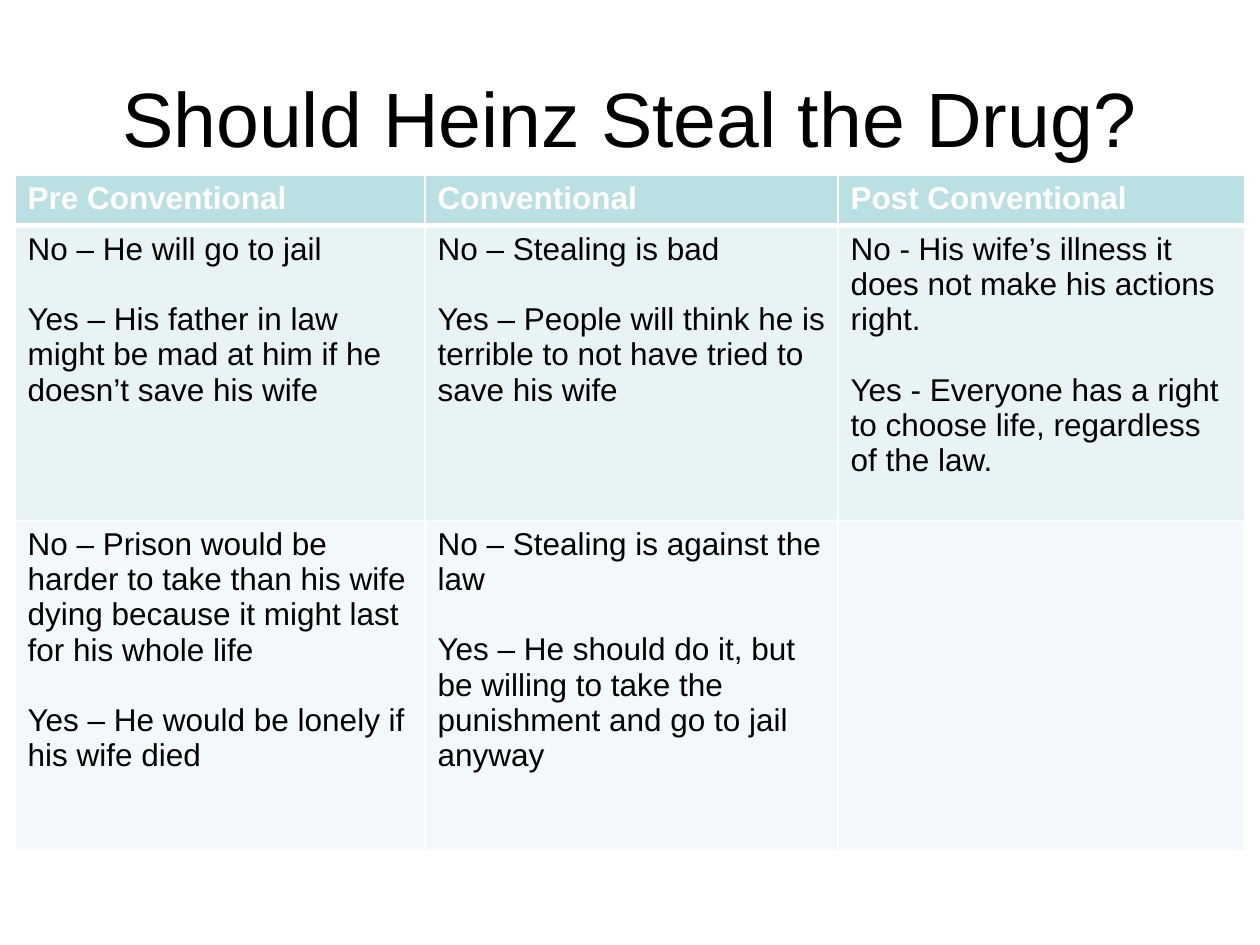
import pptx
import pptx.util
import pptx.dml.color
import pptx.enum.text
import pptx.oxml
import pptx.oxml.ns

RGBColor = pptx.dml.color.RGBColor
WHITE = RGBColor(0xFF, 0xFF, 0xFF)
BLACK = RGBColor(0x00, 0x00, 0x00)
HEADER = RGBColor(0xBB, 0xE0, 0xE3)
BAND_1 = RGBColor(0xE7, 0xF3, 0xF4)
BAND_2 = RGBColor(0xF3, 0xF9, 0xFA)
FONT = "Arial"


def px(n):
    return round(n * 914400 / 126)


def format_run(r, size, color, bold=False):
    r.font.name = FONT
    r.font.size = pptx.util.Pt(size)
    r.font.bold = bold
    r.font.color.rgb = color


prs = pptx.Presentation()
prs.slide_width = px(1260)
prs.slide_height = px(945)
s = prs.slides.add_slide(prs.slide_layouts[6])

sp = s.shapes.add_textbox(px(63), px(38), px(1134), px(158))
tf = sp.text_frame
tf.word_wrap = True
tf.vertical_anchor = pptx.enum.text.MSO_ANCHOR.MIDDLE
tf.text = "Should Heinz Steal the Drug?"
p = tf.paragraphs[0]
p.alignment = pptx.enum.text.PP_ALIGN.CENTER
format_run(p.runs[0], 44, BLACK)

rows = [
    (50, HEADER, [["Pre Conventional"], ["Conventional"], ["Post Conventional"]]),
    (295, BAND_1, [
        ["No – He will go to jail",
         "Yes – His father in law might be mad at him if he doesn’t save his wife"],
        ["No – Stealing is bad",
         "Yes – People will think he is terrible to not have tried to save his wife"],
        ["No - His wife’s illness it does not make his actions right.",
         "Yes - Everyone has a right to choose life, regardless of the law."],
    ]),
    (330, BAND_2, [
        ["No – Prison would be harder to take than his wife dying because it "
         "might last for his whole life",
         "Yes – He would be lonely if his wife died"],
        ["No – Stealing is against the law",
         "Yes – He should do it, but be willing to take the punishment and go "
         "to jail anyway"],
        [],
    ]),
]
widths = [410, 413, 407]

table = s.shapes.add_table(
    len(rows), len(widths), px(15), px(175),
    px(sum(widths)), px(sum(row[0] for row in rows))).table
for col, width in zip(table.columns, widths):
    col.width = px(width)

for i, (height, fill, texts) in enumerate(rows):
    table.rows[i].height = px(height)
    for j, lines in enumerate(texts):
        cell = table.cell(i, j)
        cell.fill.solid()
        cell.fill.fore_color.rgb = fill
        tf = cell.text_frame
        tf.text = "\n".join(lines)
        for n, p in enumerate(tf.paragraphs):
            p.space_before = pptx.util.Pt(20 if n else 0)
            for r in p.runs:
                format_run(r, 18, BLACK if i else WHITE, i == 0)
        tcPr = cell._tc.get_or_add_tcPr()
        for n, side in enumerate(["L", "R", "T", "B"]):
            thick = (i, side) in [(0, "B"), (1, "T")]
            tcPr.insert(n, pptx.oxml.parse_xml(
                f'<a:ln{side} {pptx.oxml.ns.nsdecls("a")} w="{38100 if thick else 12700}">'
                f'<a:solidFill><a:srgbClr val="{WHITE}"/></a:solidFill></a:ln{side}>'))

prs.save("out.pptx")
